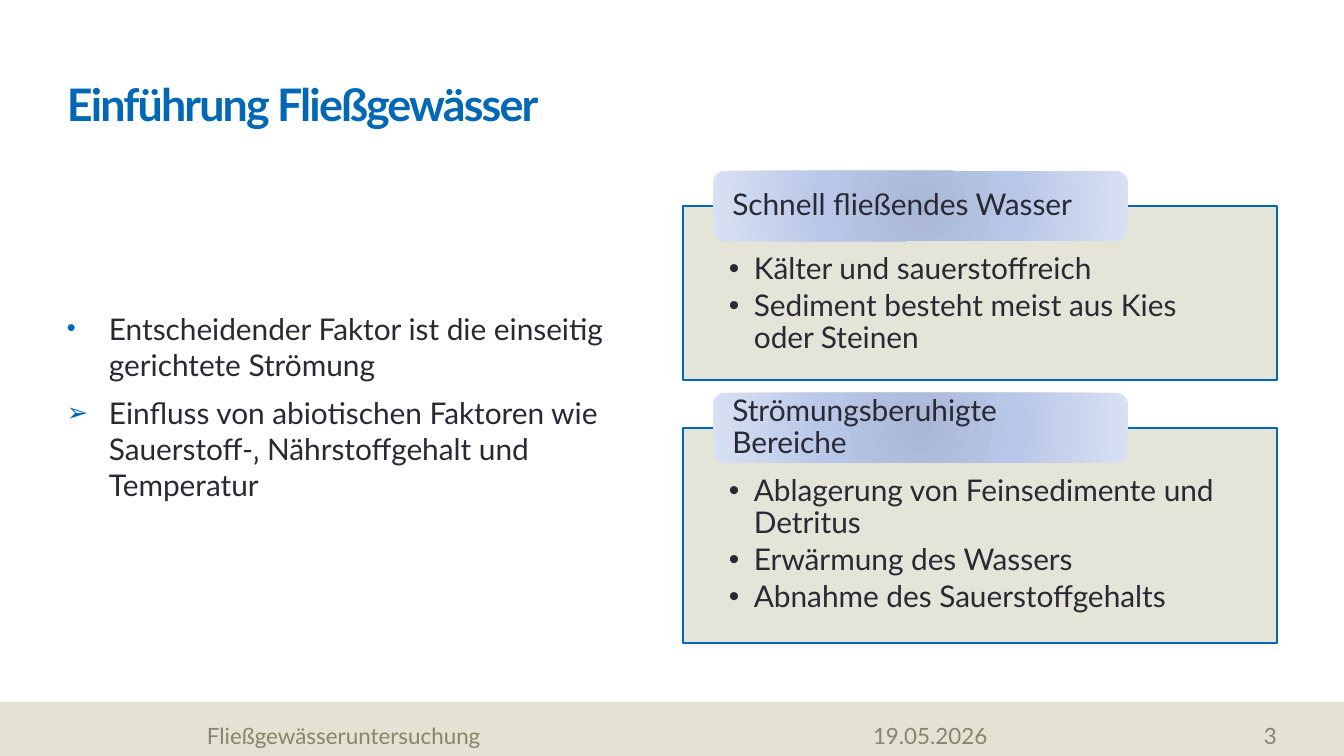
from lxml.etree import SubElement
from pptx import Presentation
from pptx.dml.color import RGBColor
from pptx.enum.shapes import MSO_SHAPE as Shape
from pptx.enum.text import MSO_ANCHOR as Anchor, MSO_AUTO_SIZE as AutoSize, PP_ALIGN as Align
from pptx.oxml.ns import qn
from pptx.util import Pt

PX = 914400 / 134.4
COLORS = {"accent": "0068B4", "text": "292934", "sand": "E3E2D4", "muted": "86846B"}
GRADIENT = [(0, "AAB8D6"), (45, "B8C6E7"), (100, "D8E0F2")]
FONT = "Lato"

TITLE = "Einführung Fließgewässer"
POINTS = [
    ("•", "Entscheidender Faktor ist die einseitig gerichtete Strömung"),
    ("➢", "Einfluss von abiotischen Faktoren wie Sauerstoff-‚ Nährstoffgehalt und Temperatur"),
]
CARDS = [  # heading, height, points
    ("Schnell fließendes Wasser", 174,
     ["Kälter und sauerstoffreich", "Sediment besteht meist aus Kies oder Steinen"]),
    ("Strömungsberuhigte Bereiche", 215,
     ["Ablagerung von Feinsedimente und Detritus", "Erwärmung des Wassers",
      "Abnahme des Sauerstoffgehalts"]),
]
FOOTER = [  # text, left, width, alignment
    ("Fließgewässeruntersuchung", 207, 646, Align.LEFT),
    ("19.05.2026", 873, 317, Align.LEFT),
    ("3", 1202, 75, Align.RIGHT),
]
CARD_LEFT, CARD_TOP, CARD_WIDTH, CARD_GAP = 683, 206, 594, 48
TAB_INDENT, TAB_WIDTH, TAB_HEIGHT = 30, 415, 70


def px(value):
    return round(value * PX)


def color(name):
    return RGBColor.from_string(COLORS[name])


def set_frame(shape, anchor, insets=(0, 0, 0, 0)):
    frame = shape.text_frame
    frame.word_wrap = True
    frame.auto_size = AutoSize.NONE
    frame.vertical_anchor = anchor
    (frame.margin_left, frame.margin_top,
     frame.margin_right, frame.margin_bottom) = map(px, insets)
    return frame


def set_font(para, size, name, bold=False):
    font = para.font
    font.name, font.size, font.bold = FONT, Pt(size), bold
    font.color.rgb = color(name)


def add_bullet(para, mark, indent, color_name, percent):
    props = para._p.get_or_add_pPr()
    props.set("marL", str(px(indent)))
    props.set("indent", str(-px(indent)))
    tint = SubElement(props, qn("a:buClr"))
    SubElement(tint, qn("a:srgbClr"), val=COLORS[color_name])
    SubElement(props, qn("a:buSzPct"), val=str(percent * 1000))
    SubElement(props, qn("a:buFont"), typeface="Arial")
    SubElement(props, qn("a:buChar"), char=mark)


def add_paragraph(frame, index):
    return frame.add_paragraph() if index else frame.paragraphs[0]


def add_text_box(page, *place):
    return page.shapes.add_textbox(*map(px, place))


def add_box(page, kind, *place):
    box = page.shapes.add_shape(kind, *map(px, place))
    box.shadow.inherit = False
    box.line.fill.background()
    return box


def fill_sand(box, opacity=100):
    box.fill.solid()
    box.fill.fore_color.rgb = color("sand")
    if opacity < 100:
        tint = box.fill._xPr.find(qn("a:solidFill"))[0]
        SubElement(tint, qn("a:alpha"), val=str(opacity * 1000))


def fill_radial(box):
    """Gradient running from the middle of the box outwards."""
    box.fill.gradient()
    grad = box.fill._xPr.find(qn("a:gradFill"))
    for child in list(grad):
        grad.remove(child)
    stops = SubElement(grad, qn("a:gsLst"))
    for position, tint in GRADIENT:
        stop = SubElement(stops, qn("a:gs"), pos=str(position * 1000))
        SubElement(stop, qn("a:srgbClr"), val=tint)
    shade = SubElement(grad, qn("a:path"), path="circle")
    SubElement(shade, qn("a:fillToRect"), dict.fromkeys("ltrb", "50000"))


def add_card(page, top, heading, height, points):
    card = add_box(page, Shape.RECTANGLE, CARD_LEFT, top, CARD_WIDTH, height)
    fill_sand(card, 90)
    card.line.color.rgb = color("accent")
    card.line.width = Pt(0.75)
    frame = set_frame(card, Anchor.TOP, (46, 48, 46, 16))
    for index, text in enumerate(points):
        para = add_paragraph(frame, index)
        para.text, para.alignment = text, Align.LEFT
        para.line_spacing, para.space_after = 0.9, Pt(2.4)
        add_bullet(para, "•", 25, "text", 100)
        set_font(para, 16, "text")

    tab = add_box(page, Shape.ROUNDED_RECTANGLE, CARD_LEFT + TAB_INDENT,
                  top - TAB_HEIGHT / 2, TAB_WIDTH, TAB_HEIGHT)
    fill_radial(tab)
    para = set_frame(tab, Anchor.MIDDLE, (16, 0, 16, 0)).paragraphs[0]
    para.text, para.alignment, para.line_spacing = heading, Align.LEFT, 0.9
    set_font(para, 16, "text")


deck = Presentation()
deck.slide_width, deck.slide_height = px(1344), px(756)
page = deck.slides.add_slide(deck.slide_layouts[5])

fill_sand(add_box(page, Shape.RECTANGLE, 0, 702, 1344, 54))

title = page.shapes.title
title.left, title.top, title.width, title.height = map(px, (67, 17, 1210, 114))
para = set_frame(title, Anchor.BOTTOM).paragraphs[0]
para.text, para.alignment, para.line_spacing = TITLE, Align.LEFT, 0.9
set_font(para, 24, "accent", bold=True)
para.runs[0]._r.get_or_add_rPr().set("spc", "-100")

frame = set_frame(add_text_box(page, 67, 159, 594, 495), Anchor.MIDDLE)
for index, (mark, text) in enumerate(POINTS):
    para = add_paragraph(frame, index)
    para.text = text
    para.space_before = Pt(7 if index else 0)
    add_bullet(para, mark, 42, "accent", 85)
    set_font(para, 16, "text")

top = CARD_TOP
for heading, height, points in CARDS:
    add_card(page, top, heading, height, points)
    top += height + CARD_GAP

for text, left, width, alignment in FOOTER:
    para = set_frame(add_text_box(page, left, 722, width, 27), Anchor.BOTTOM).paragraphs[0]
    para.text, para.alignment, para.line_spacing = text, alignment, 0.9
    set_font(para, 12, "muted")

deck.save("out.pptx")
